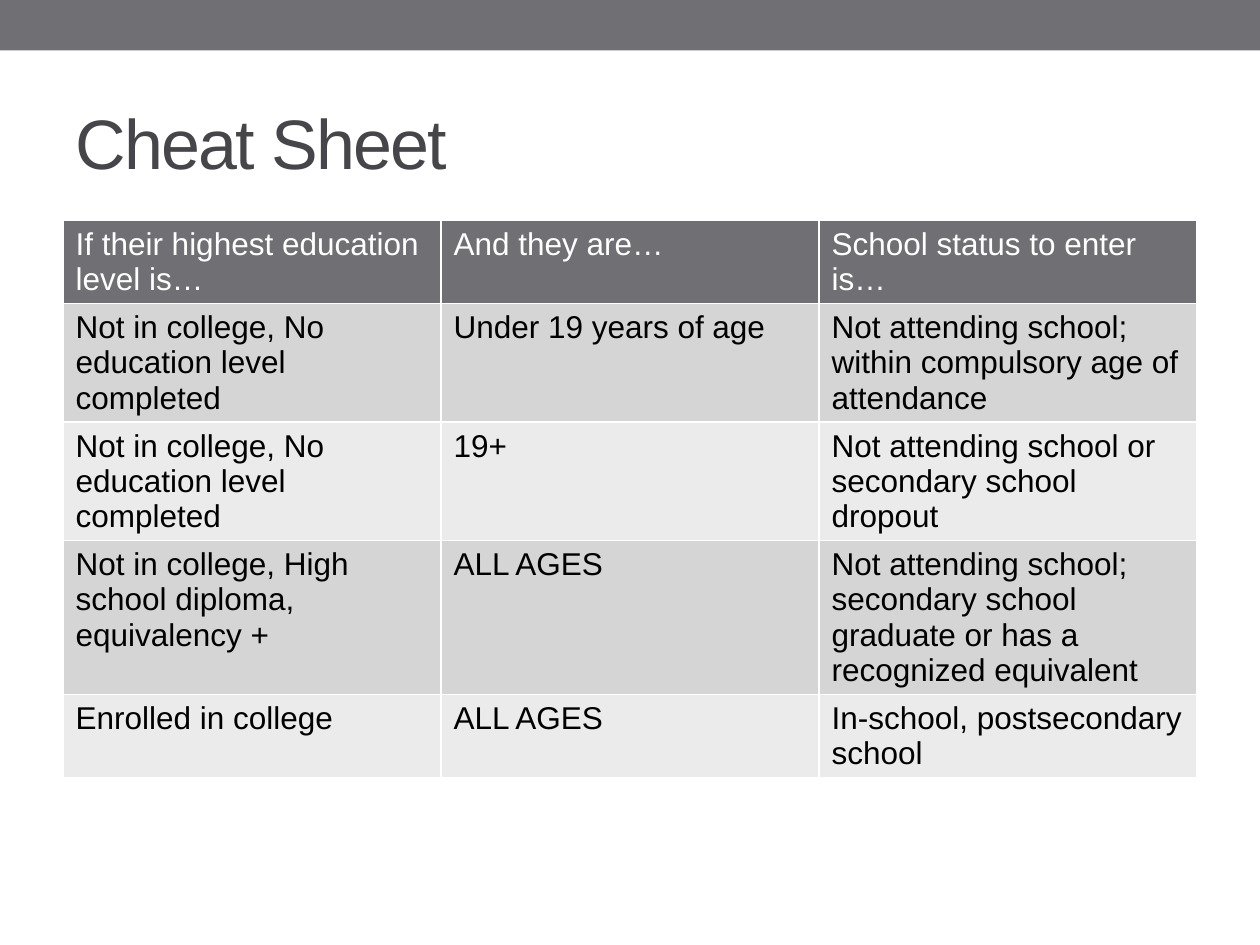
from lxml import etree
from pptx import Presentation
from pptx.dml.color import RGBColor
from pptx.enum import shapes, text
from pptx.oxml import ns
from pptx.util import Inches, Pt

WHITE = RGBColor(0xFF, 0xFF, 0xFF)
BLACK = RGBColor(0, 0, 0)
GRAY = RGBColor(0x6F, 0x6F, 0x74)
DARK = RGBColor(0x46, 0x46, 0x4A)
BANDS = [RGBColor(0xD5, 0xD5, 0xD6), RGBColor(0xEB, 0xEB, 0xEB)]

ROWS = [
    ["If their highest education level is…", "And they are…",
     "School status to enter is…"],
    ["Not in college, No education level completed", "Under 19 years of age",
     "Not attending school; within compulsory age of attendance"],
    ["Not in college, No education level completed", "19+",
     "Not attending school or secondary school dropout"],
    ["Not in college, High school diploma, equivalency +", "ALL AGES",
     "Not attending school; secondary school graduate or has a recognized equivalent"],
    ["Enrolled in college", "ALL AGES", "In-school, postsecondary school"],
]


def write(frame, words, size=18, color=BLACK, font="Arial", space=0):
    """Fill a text frame with one run; space is letter spacing in points."""
    para = frame.paragraphs[0]
    para.alignment = text.PP_ALIGN.LEFT
    run = para.add_run()
    run.text = words
    run.font.name = font
    run.font.size = Pt(size)
    run.font.bold = False
    run.font.color.rgb = color
    if space:
        run.font._element.set("spc", str(space * 100))


def edge(cell, color=WHITE, width=1):
    """Draw all four borders; they must come before the fill in the XML."""
    props = cell._tc.get_or_add_tcPr()
    for spot, side in enumerate(("lnL", "lnR", "lnT", "lnB")):
        line = etree.Element(ns.qn("a:" + side), w=str(Pt(width)))
        fill = etree.SubElement(line, ns.qn("a:solidFill"))
        etree.SubElement(fill, ns.qn("a:srgbClr"), val=str(color))
        props.insert(spot, line)


class Deck:
    def __init__(self):
        self.show = Presentation()
        self.show.slide_width = Inches(10)
        self.show.slide_height = Inches(7.5)
        self.slide = self.show.slides.add_slide(self.show.slide_layouts[5])

    def band(self, left, top, width, height, color):
        bar = self.slide.shapes.add_shape(
            shapes.MSO_SHAPE.RECTANGLE,
            Inches(left), Inches(top), Inches(width), Inches(height))
        bar.shadow.inherit = False
        bar.fill.solid()
        bar.fill.fore_color.rgb = color
        bar.line.fill.background()

    def title(self, words, left, top, width, height):
        head = self.slide.shapes.title
        head.left, head.top = Inches(left), Inches(top)
        head.width, head.height = Inches(width), Inches(height)
        head.text_frame.vertical_anchor = text.MSO_ANCHOR.MIDDLE
        write(head.text_frame, words, size=40, color=DARK, space=-1)

    def table(self, rows, left, top, width, height, least):
        """Add a banded table; rows start at the least height and grow to fit."""
        frame = self.slide.shapes.add_table(
            len(rows), len(rows[0]),
            Inches(left), Inches(top), Inches(width), Inches(height))
        for i, row in enumerate(rows):
            frame.table.rows[i].height = Inches(least)
            for j, words in enumerate(row):
                cell = frame.table.cell(i, j)
                cell.fill.solid()
                cell.fill.fore_color.rgb = BANDS[(i - 1) % 2] if i else GRAY
                edge(cell)
                write(cell.text_frame, words, color=BLACK if i else WHITE)
        frame.height = Inches(height)


def main():
    deck = Deck()
    deck.band(0, 0, 10, 0.4, GRAY)
    deck.title("Cheat Sheet", 0.5, 0.58, 9, 1.08)
    deck.table(ROWS, 0.5, 1.75, 9, 4.7, least=0.41)
    deck.show.save("out.pptx")


if __name__ == "__main__":
    main()
